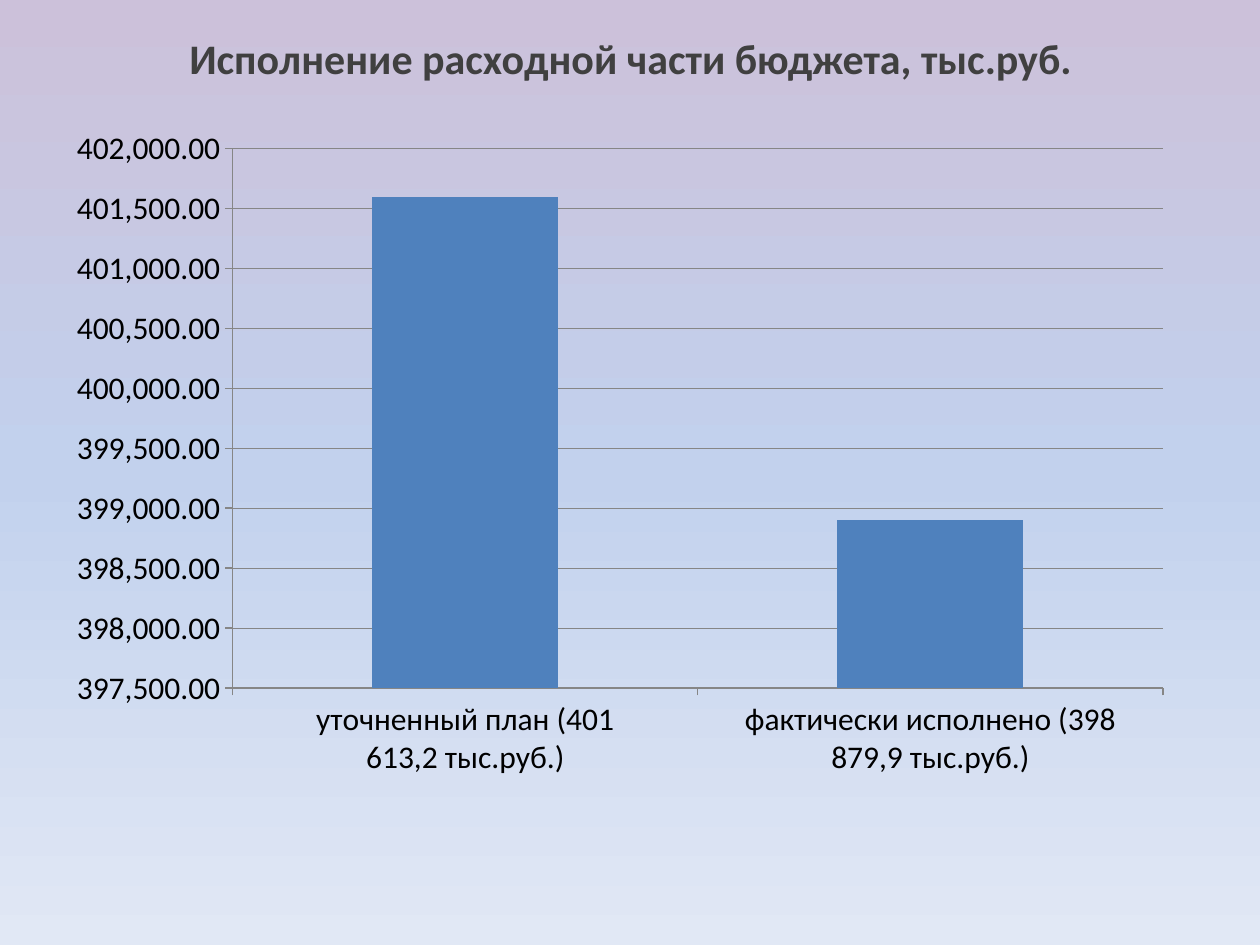
from copy import deepcopy

from pptx import Presentation
from pptx.chart.data import CategoryChartData
from pptx.dml.color import RGBColor as Color
from pptx.enum.chart import XL_CHART_TYPE as ChartType, XL_TICK_MARK as TickMark
from pptx.enum.text import MSO_ANCHOR as Anchor, PP_ALIGN as Align
from pptx.oxml.ns import qn
from pptx.util import Inches, Pt

THEME = {
    "font": "Calibri",
    "title_size": Pt(24),
    "chart_size": Pt(18),
    "title": Color.from_string("404040"),
    "label": Color.from_string("000000"),
    "bar": Color.from_string("4F81BD"),
    "line": Color.from_string("868686"),
    "background": [(0, "CCC1DA"), (0.5, "C2D1ED"), (1, "E1E8F5")],
}

presentation = Presentation()
presentation.slide_width, presentation.slide_height = Inches(10), Inches(7.5)
slide = presentation.slides.add_slide(presentation.slide_layouts[5])


def place(left, top, width, height):
    """Turn percentages of the slide's size into lengths."""
    across = presentation.slide_width / 100
    down = presentation.slide_height / 100
    return int(left * across), int(top * down), int(width * across), int(height * down)


# Background: three-stop gradient from top to bottom
fill = slide.background.fill
fill.gradient()
fill.gradient_angle = 270
stop_list = slide.element.find(".//" + qn("a:gsLst"))
stop_list.append(deepcopy(stop_list[-1]))
for stop, (position, color) in zip(fill.gradient_stops, THEME["background"]):
    stop.position = position
    stop.color.rgb = Color.from_string(color)

# Title
title = slide.shapes.title
title.left, title.top, title.width, title.height = place(2.8, 2.8, 94.5, 8.4)
title.text_frame.vertical_anchor = Anchor.TOP
paragraph = title.text_frame.paragraphs[0]
paragraph.alignment = Align.CENTER
run = paragraph.add_run()
run.text = "Исполнение расходной части бюджета, тыс.руб."
run.font.name = THEME["font"]
run.font.size = THEME["title_size"]
run.font.bold = True
run.font.color.rgb = THEME["title"]

# Column chart: plan against actual spending
data = CategoryChartData(number_format="#,##0.00")
data.categories = [
    "уточненный план (401\n613,2 тыс.руб.)",
    "фактически исполнено (398\n879,9 тыс.руб.)",
]
data.add_series("Расходы", [401600, 398900])
chart = slide.shapes.add_chart(
    ChartType.COLUMN_CLUSTERED, *place(4.3, 12.3, 89.8, 71.3), data
).chart
chart.has_title = False
chart.has_legend = False
chart.font.name = THEME["font"]
chart.font.size = THEME["chart_size"]
chart.font.color.rgb = THEME["label"]

# Columns
plot = chart.plots[0]
plot.gap_width = 150
plot.vary_by_categories = False
series_fill = plot.series[0].format.fill
series_fill.solid()
series_fill.fore_color.rgb = THEME["bar"]

# Axes and gridlines
value_axis = chart.value_axis
value_axis.minimum_scale, value_axis.maximum_scale = 397500, 402000
value_axis.major_unit = 500
value_axis.has_major_gridlines = True
value_axis.tick_labels.number_format = "#,##0.00"
value_axis.tick_labels.number_format_is_linked = False
for axis in (chart.category_axis, value_axis):
    axis.major_tick_mark = TickMark.OUTSIDE
    axis.minor_tick_mark = TickMark.NONE
for part, width in (
    (chart.category_axis, 0.75),
    (value_axis, 0.75),
    (value_axis.major_gridlines, 0.5),
):
    part.format.line.color.rgb = THEME["line"]
    part.format.line.width = Pt(width)

presentation.save("out.pptx")
